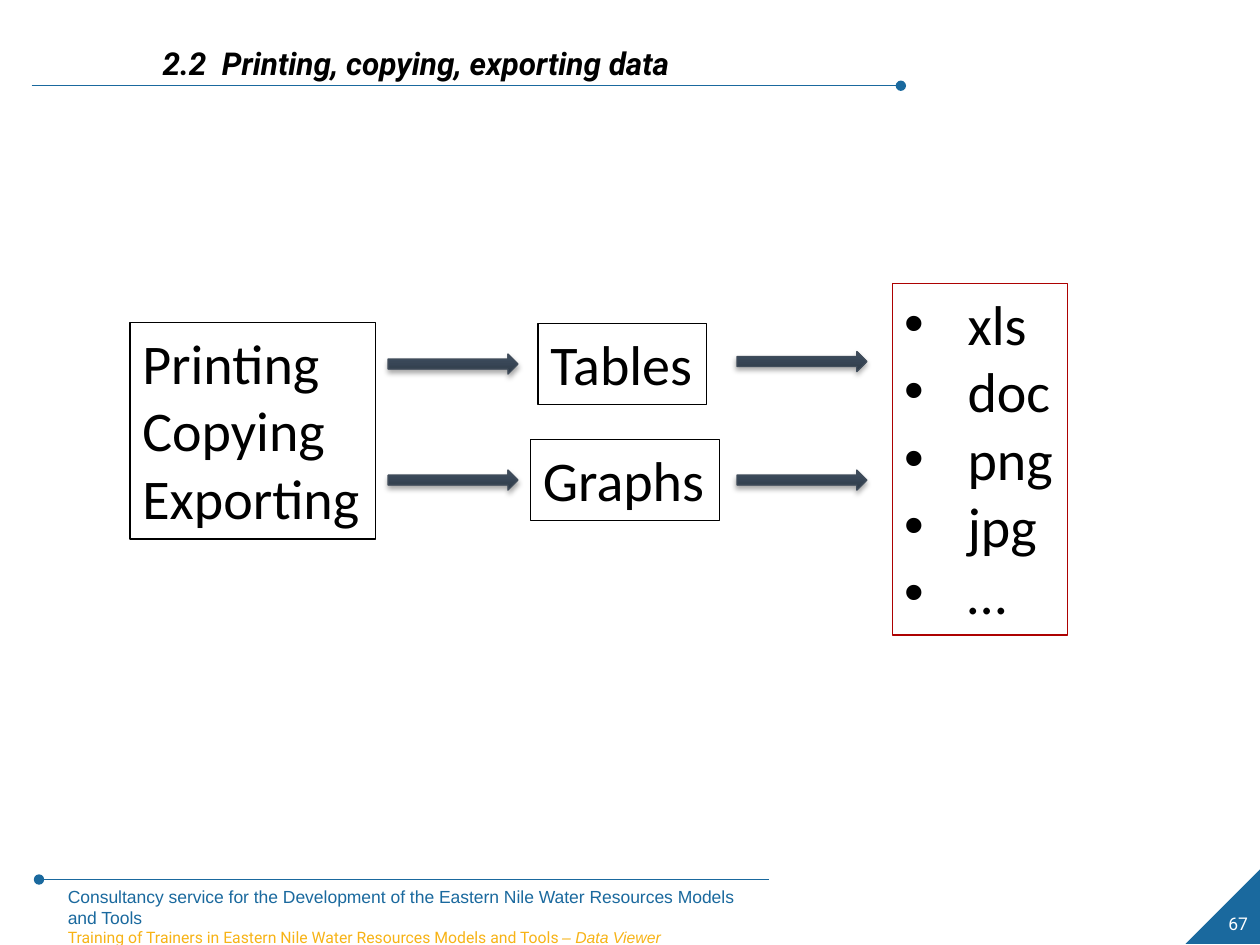
from lxml.etree import SubElement
from pptx import Presentation
from pptx.dml.color import RGBColor
from pptx.enum.shapes import MSO_CONNECTOR as CONNECTOR, MSO_SHAPE as SHAPE
from pptx.enum.text import MSO_ANCHOR as ANCHOR, MSO_AUTO_SIZE as AUTOSIZE, PP_ALIGN as ALIGN
from pptx.oxml.ns import qn
from pptx.util import Pt

BLUE, GOLD, BLACK, WHITE, RED = "1A699E", "F7B316", "000000", "FFFFFF", "AD0101"
ARROW_DARK, ARROW_LIGHT, ARROW_EDGE = "2E3A47", "3C4B5C", "404C5A"

TITLE = "2.2  Printing, copying, exporting data"
FOOTER = [
    [("Consultancy service for the Development of the Eastern Nile Water Resources Models and Tools",
      "Arial", 10, BLUE, False)],
    [("Training of Trainers in Eastern Nile Water Resources Models and Tools ",
      "Roboto", 9, GOLD, False),
     ("– Data Viewer", "Arial", 9, GOLD, True)],
]
PAGE_NUMBER = [[("67", "Roboto", 10, WHITE, False)]]
BOXES = [
    (["Printing", "Copying", "Exporting"], (74.2, 184.3, 140.4, 123.8), BLACK, False),
    (["Tables"], (307.4, 185, 96.5, 46), BLACK, False),
    (["Graphs"], (303.1, 251.3, 108, 46), BLACK, False),
    (["xls", "doc", "png", "jpg", "…"], (509.8, 162, 100.1, 200.9), RED, True),
]
ARROWS = [(221.8, 202.3), (221.8, 268.6), (421.2, 200.9), (421.2, 268.6)]
ARROW_SIZE = (74.2, 11.5)
RULES = [((439.2, 502.6), (22.3, 502.6)), ((18, 49), (514.8, 49))]
CORNER = [(720, 539.3), (677.5, 539.3), (720, 496.8)]


def color(hex_code):
    return RGBColor.from_string(hex_code)


def points(values):
    return [Pt(value) for value in values]


def add_run(paragraph, text, font, size, hex_code, italic=False, bold=False):
    run = paragraph.add_run()
    run.text = text
    run.font.name, run.font.size = font, Pt(size)
    run.font.italic, run.font.bold = italic, bold
    run.font.color.rgb = color(hex_code)


def write(frame, paragraphs, wrap):
    frame.word_wrap = wrap
    frame.vertical_anchor = ANCHOR.TOP
    for index, runs in enumerate(paragraphs):
        paragraph = frame.add_paragraph() if index else frame.paragraphs[0]
        paragraph.alignment = ALIGN.LEFT
        for run in runs:
            add_run(paragraph, *run)


def add_bullet(paragraph):
    properties = paragraph._p.get_or_add_pPr()
    properties.set("marL", str(Pt(36)))
    properties.set("indent", str(Pt(-36)))
    SubElement(properties, qn("a:buFont"), typeface="Arial")
    SubElement(properties, qn("a:buChar"), char="•")


def add_box(shapes, lines, place, edge, bulleted):
    box = shapes.add_shape(SHAPE.RECTANGLE, *points(place))
    box.shadow.inherit = False
    box.fill.background()
    box.line.color.rgb, box.line.width = color(edge), Pt(0.75)
    write(box.text_frame, [[(line, "Calibri", 32, BLACK)] for line in lines], False)
    if bulleted:
        for paragraph in box.text_frame.paragraphs:
            add_bullet(paragraph)


def add_arrow(shapes, place):
    arrow = shapes.add_shape(SHAPE.RIGHT_ARROW, *points(place + ARROW_SIZE))
    arrow.line.color.rgb, arrow.line.width = color(ARROW_EDGE), Pt(0.75)
    arrow.fill.gradient()
    arrow.fill.gradient_angle = 90
    stops = zip(arrow.fill.gradient_stops, (0, 0.8), (ARROW_DARK, ARROW_LIGHT))
    for stop, position, hex_code in stops:
        stop.position, stop.color.rgb = position, color(hex_code)
    arrow.shadow.inherit = False
    effects = arrow._element.spPr.find(qn("a:effectLst"))
    shadow = SubElement(effects, qn("a:outerShdw"), blurRad=str(Pt(3.1)),
                        dist=str(Pt(1.8)), dir="5400000", rotWithShape="0")
    shade = SubElement(shadow, qn("a:srgbClr"), val=BLACK)
    SubElement(shade, qn("a:alpha"), val="35000")


def add_rule(shapes, start, end):
    rule = shapes.add_connector(CONNECTOR.STRAIGHT, *points(start + end))
    rule.line.color.rgb, rule.line.width = color(BLUE), Pt(0.75)
    SubElement(rule.line._get_or_add_ln(), qn("a:tailEnd"), type="oval")
    SubElement(rule._element.spPr, qn("a:effectLst"))


def add_corner(shapes):
    start, *rest = [points(corner) for corner in CORNER]
    builder = shapes.build_freeform(*start)
    builder.add_line_segments(rest, close=True)
    corner = builder.convert_to_shape()
    corner.shadow.inherit = False
    corner.fill.solid()
    corner.fill.fore_color.rgb = color(BLUE)
    corner.line.fill.background()


def set_title(title):
    title.left, title.top, title.width, title.height = points((85.7, 10.8, 618.5, 36))
    write(title.text_frame, [[(TITLE, "Roboto", 18, BLACK, True, True)]], True)
    title.text_frame.auto_size = AUTOSIZE.NONE
    title.text_frame.paragraphs[0].line_spacing = 1.5
    title.text_frame.paragraphs[0].space_before = Pt(0)


def main():
    deck = Presentation()
    deck.slide_width, deck.slide_height = Pt(720), Pt(540)
    slide = deck.slides.add_slide(deck.slide_layouts[5])
    shapes = slide.shapes
    set_title(shapes.title)
    add_corner(shapes)
    page_number = shapes.add_textbox(*points((694.8, 518.4, 26.6, 19.4)))
    write(page_number.text_frame, PAGE_NUMBER, False)
    footer = shapes.add_textbox(*points((31.7, 502.6, 403.2, 30.2)))
    write(footer.text_frame, FOOTER, True)
    for start, end in RULES:
        add_rule(shapes, start, end)
    for box in BOXES:
        add_box(shapes, *box)
    for place in ARROWS:
        add_arrow(shapes, place)
    deck.save("out.pptx")


if __name__ == "__main__":
    main()
